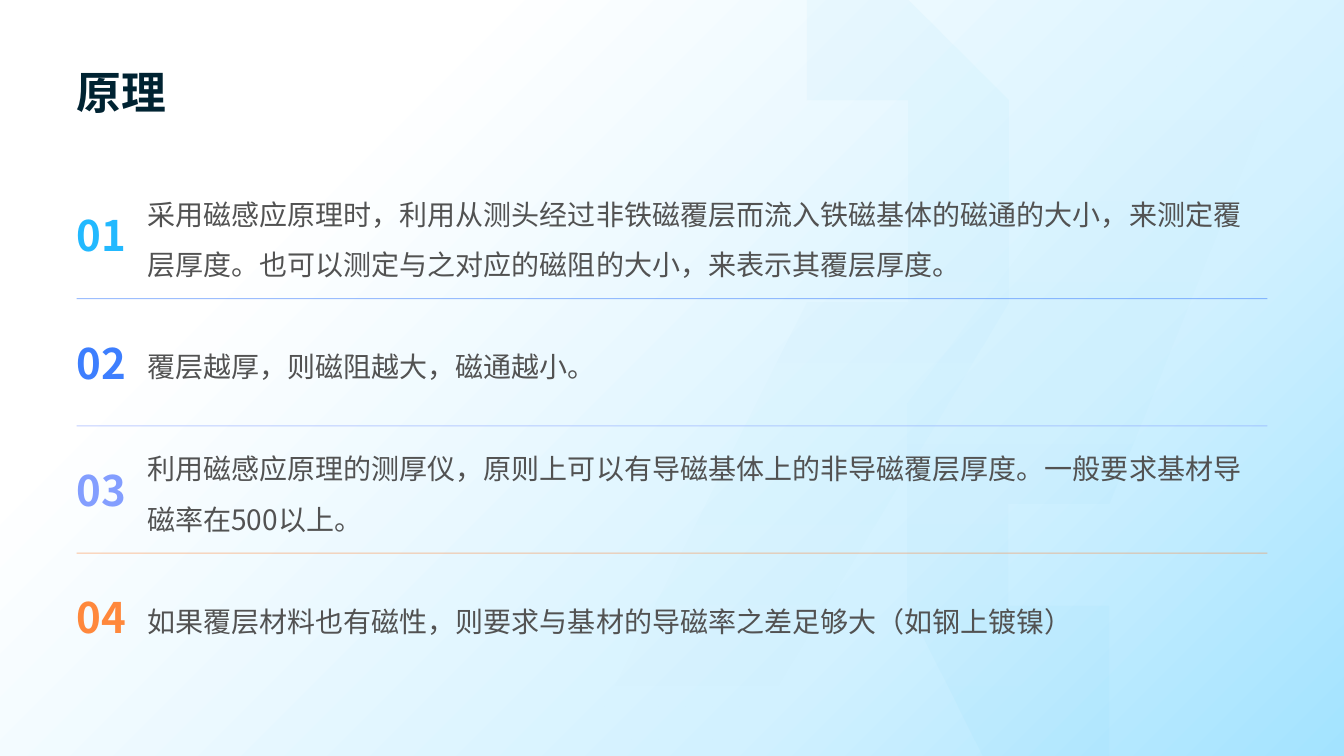
import pptx
import pptx.dml.color
import pptx.enum.shapes
import pptx.enum.text
import pptx.oxml
import pptx.oxml.ns
import pptx.util

Inches = pptx.util.Inches
Anchor = pptx.enum.text.MSO_ANCHOR
FONT = "Noto Sans CJK SC"
WIDTH, HEIGHT = 13.33, 7.5
COLOURS = {
    "white": "FFFFFF", "pale": "D2F1FF", "sky": "A3E3FF", "title": "002332", "body": "525252",
    "cyan": "22B9FF", "blue": "3D7EFE", "violet": "839EFF", "orange": "FF883C",
}
PRINCIPLES = [
    ("cyan", "采用磁感应原理时，利用从测头经过非铁磁覆层而流入铁磁基体的磁通的大小，来测定覆层厚度。也可以测定与之对应的磁阻的大小，来表示其覆层厚度。"),
    ("blue", "覆层越厚，则磁阻越大，磁通越小。"),
    ("violet", "利用磁感应原理的测厚仪，原则上可以有导磁基体上的非导磁覆层厚度。一般要求基材导磁率在500以上。"),
    ("orange", "如果覆层材料也有磁性，则要求与基材的导磁率之差足够大（如钢上镀镍）"),
]


def rgb(name):
    return pptx.dml.color.RGBColor.from_string(COLOURS[name])


def paint_gradient(fill, holder, stops, angle):
    """Fill with stops of (position %, colour, opacity %); the angle runs clockwise."""
    fill.solid()
    solid = holder.find(pptx.oxml.ns.qn("a:solidFill"))
    marks = "".join(
        f'<a:gs pos="{position * 1000}"><a:srgbClr val="{COLOURS[name]}">'
        f'<a:alpha val="{opacity * 1000}"/></a:srgbClr></a:gs>'
        for position, name, opacity in stops)
    gradient = pptx.oxml.parse_xml(
        f'<a:gradFill {pptx.oxml.ns.nsdecls("a")} rotWithShape="1"><a:gsLst>{marks}</a:gsLst>'
        f'<a:lin ang="{angle * 60000}" scaled="0"/></a:gradFill>')
    holder.replace(solid, gradient)


def write(box, text, size, colour, bold=False, fade=False, wrap=True,
          anchor=Anchor.MIDDLE, spacing=None, right=0, bottom=0):
    frame = box.text_frame
    frame.auto_size = pptx.enum.text.MSO_AUTO_SIZE.NONE
    frame.word_wrap = wrap
    frame.vertical_anchor = anchor
    frame.margin_left = frame.margin_top = 0
    frame.margin_right, frame.margin_bottom = Inches(right), Inches(bottom)
    para = frame.paragraphs[0]
    para.alignment = pptx.enum.text.PP_ALIGN.LEFT
    if spacing:
        para.line_spacing = spacing
    span = para.add_run()
    span.text = text
    span.font.size, span.font.bold, span.font.name = pptx.util.Pt(size), bold, FONT
    properties = span.font.fill and span._r.get_or_add_rPr()
    if fade:
        paint_gradient(span.font.fill, properties, [(0, colour, 100), (100, colour, 70)], 90)
    else:
        span.font.color.rgb = rgb(colour)
    latin = properties.find(pptx.oxml.ns.qn("a:latin"))
    latin.addnext(pptx.oxml.parse_xml(
        f'<a:ea {pptx.oxml.ns.nsdecls("a")} typeface="{FONT}"/>'))


def curve(start, first, second, end, steps=16):
    """Points along a cubic curve, without its start."""
    points = []
    for step in range(1, steps + 1):
        t = step / steps
        weights = ((1 - t) ** 3, 3 * t * (1 - t) ** 2, 3 * t * t * (1 - t), t ** 3)
        points.append(tuple(sum(w * p[axis] for w, p in zip(weights, (start, first, second, end)))
                            for axis in (0, 1)))
    return points


def add_ribbon(page, outline, angle):
    builder = page.shapes.build_freeform(*outline[0], scale=Inches(1))
    builder.add_line_segments(outline[1:], close=True)
    ribbon = builder.convert_to_shape()
    ribbon.shadow.inherit = False
    ribbon.line.fill.background()
    paint_gradient(ribbon.fill, ribbon._element.spPr, [(0, "cyan", 0), (100, "cyan", 4)], angle)


def add_backdrop(page, left, top, width, height):
    panel = page.shapes.add_shape(
        pptx.enum.shapes.MSO_SHAPE.RECTANGLE,
        Inches(left), Inches(top), Inches(width), Inches(height))
    panel.shadow.inherit = False
    panel.line.fill.background()
    paint_gradient(panel.fill, panel._element.spPr,
                   [(23, "white", 100), (70, "pale", 100), (100, "sky", 100)], 45)

    # Two bent ribbons, the second turned by half a circle
    bend = [(7.72, 0), (8.97, 0), (9.66, 1.18),
            *curve((9.66, 1.18), (9.98, 1.75), (9.98, 2.44), (9.66, 3.01)),
            (7.06, 7.5), (5.71, 7.5), (5.78, 7.43),
            *curve((5.78, 7.43), (5.88, 7.34), (5.96, 7.23), (6.03, 7.11)),
            (8.48, 2.86),
            *curve((8.48, 2.86), (8.76, 2.39), (8.76, 1.8), (8.48, 1.33))]
    bend = [(left + x, top + y) for x, y in bend]
    turned = [(2 * left + 19.04 - x, 2 * top + height - y) for x, y in bend]
    add_ribbon(page, bend, 270)
    add_ribbon(page, turned, 90)


def add_title(page, text, left, top, width, height):
    title = page.shapes.title
    page.shapes._spTree.append(title._element)  # in front of the backdrop
    title.left, title.top = Inches(left), Inches(top)
    title.width, title.height = Inches(width), Inches(height)
    write(title, text, 32, "title", bold=True, anchor=Anchor.BOTTOM)


def add_divider(page, left, right, y, colour):
    divider = page.shapes.add_connector(
        pptx.enum.shapes.MSO_CONNECTOR.STRAIGHT, Inches(left), Inches(y), Inches(right), Inches(y))
    divider.line.width = pptx.util.Pt(0.8)
    divider.line.color.rgb = rgb(colour)
    namespace = pptx.oxml.ns.nsdecls("a")
    properties = divider._element.spPr
    shade = next(properties.iter(pptx.oxml.ns.qn("a:srgbClr")))
    shade.append(pptx.oxml.parse_xml(f'<a:alpha {namespace} val="50000"/>'))
    properties.append(pptx.oxml.parse_xml(f"<a:effectLst {namespace}/>"))


def add_principles(page, left, top, width, height):
    row_height = height / len(PRINCIPLES)
    number_width = 0.7
    for index, (colour, text) in enumerate(PRINCIPLES):
        y = top + index * row_height
        if index:
            add_divider(page, left, left + width, y, colour)
        number = page.shapes.add_textbox(
            Inches(left), Inches(y), Inches(number_width), Inches(row_height))
        write(number, f"{index + 1:02}", 30, colour, bold=True, fade=True, wrap=False, right=0.04)
        body = page.shapes.add_textbox(
            Inches(left + number_width), Inches(y),
            Inches(width - number_width), Inches(row_height))
        write(body, text, 20, "body", spacing=1.5, bottom=0.08)


def main():
    deck = pptx.Presentation()
    deck.slide_width, deck.slide_height = Inches(WIDTH), Inches(HEIGHT)
    page = deck.slides.add_slide(deck.slide_layouts[5])
    add_backdrop(page, 0, 0, WIDTH, HEIGHT)
    add_title(page, "原理", 0.76, 0.39, 11.81, 0.79)
    add_principles(page, 0.76, 1.7, 11.81, 5.05)
    deck.save("out.pptx")


if __name__ == "__main__":
    main()
